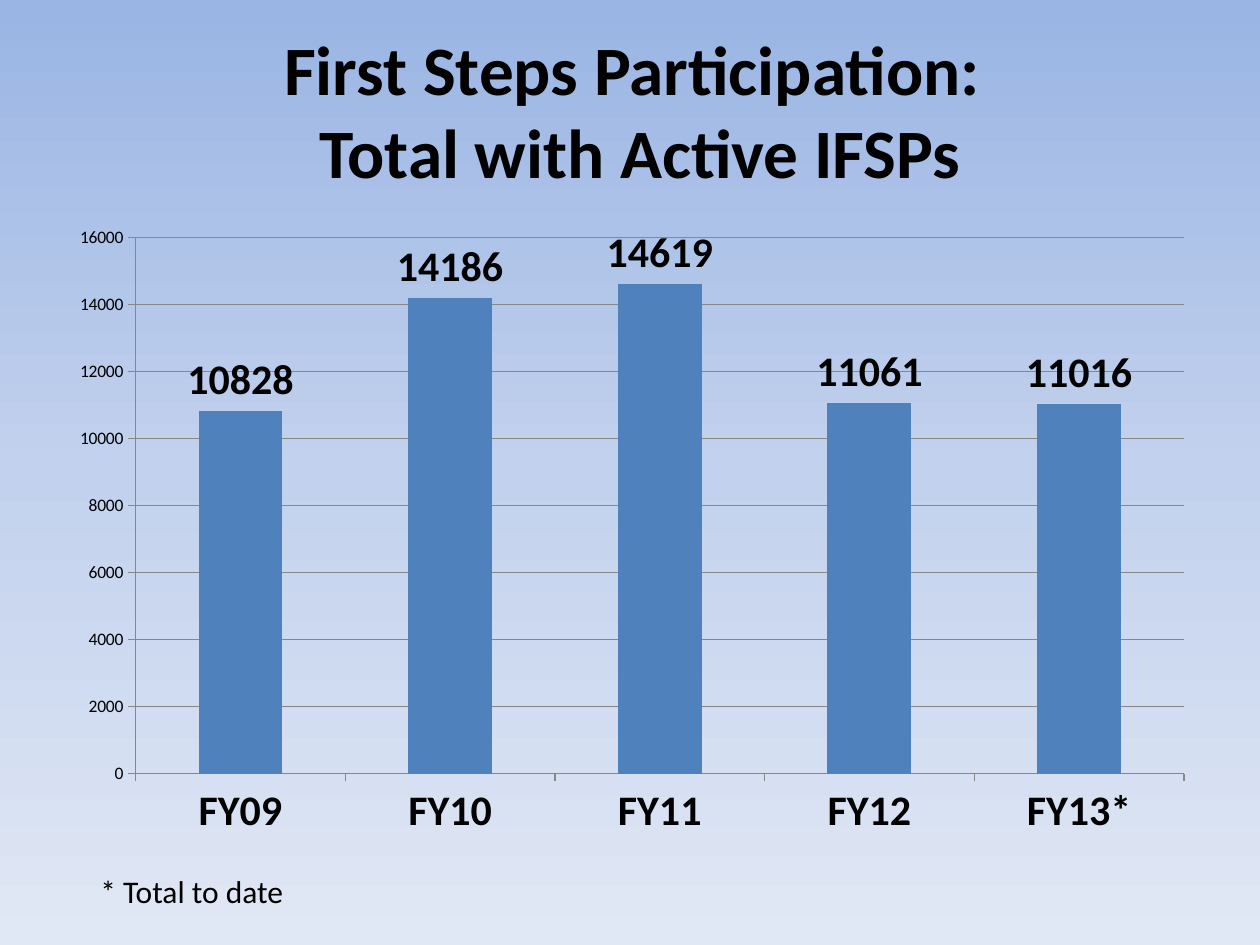
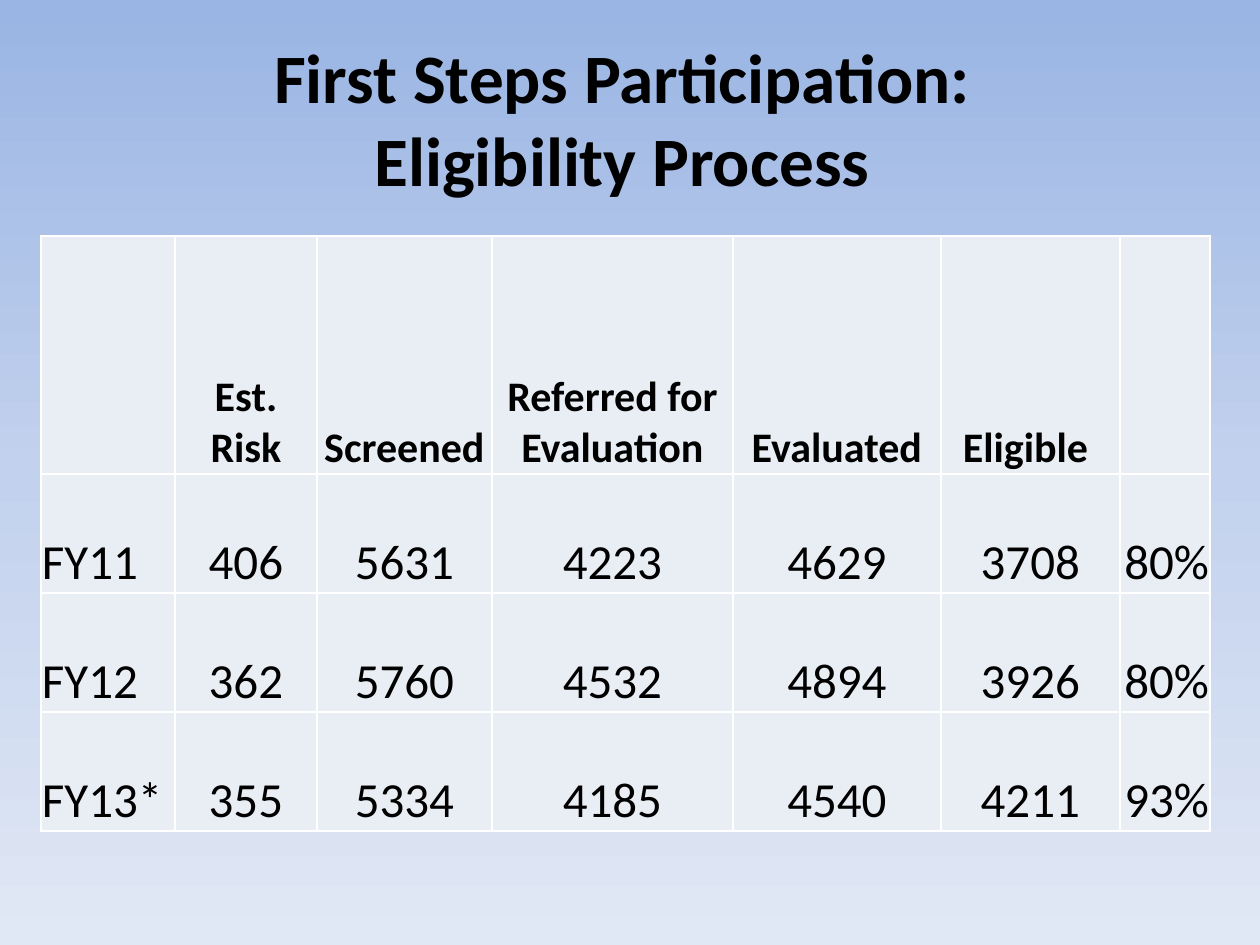
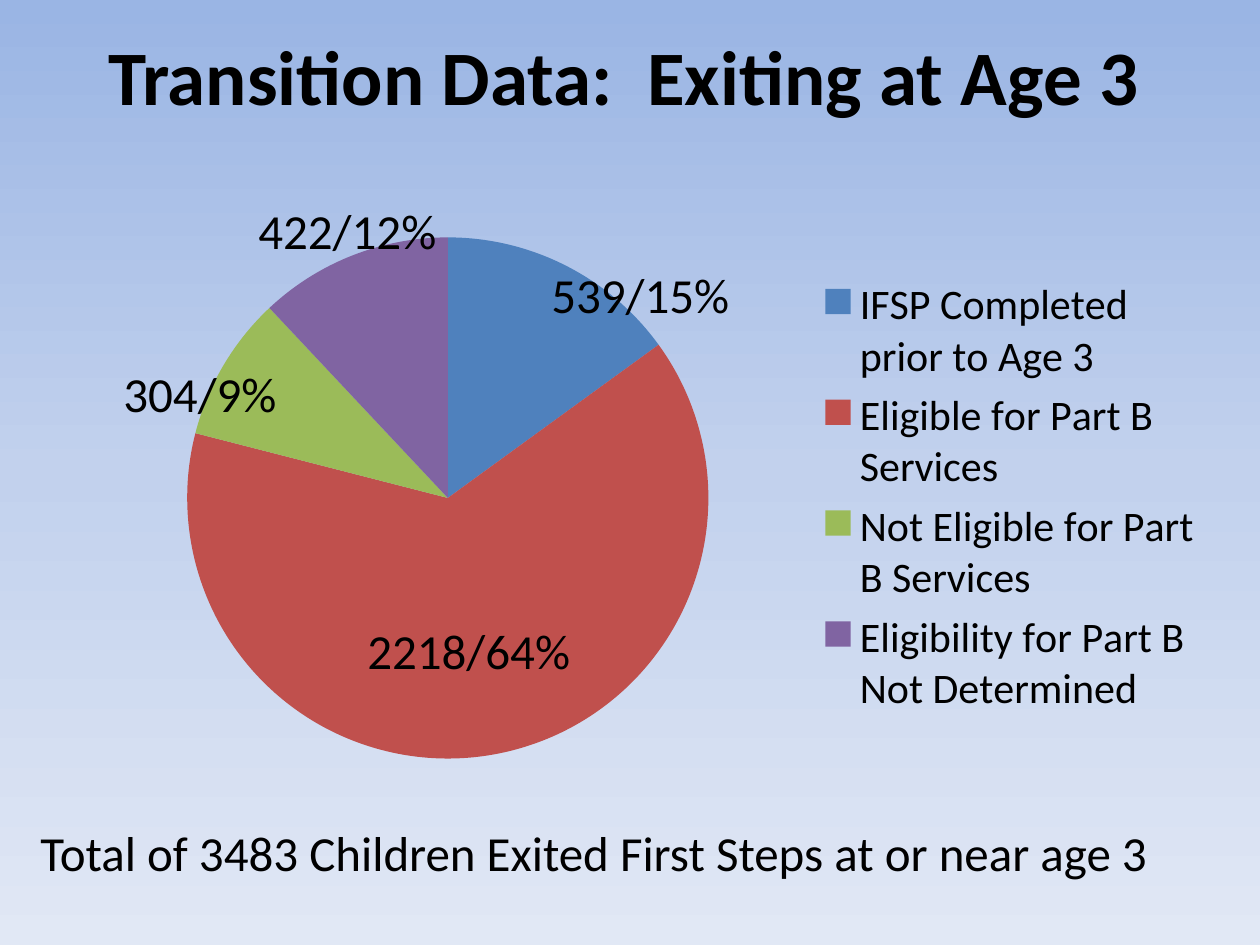
import copy
from dataclasses import dataclass

import pptx
import pptx.chart.data
import pptx.dml.color
import pptx.enum.chart
import pptx.enum.text
import pptx.oxml
import pptx.oxml.ns
import pptx.util

PX = 914400 // 126
ALIGN = pptx.enum.text.PP_ALIGN
ANCHOR = pptx.enum.text.MSO_ANCHOR
CHART = pptx.enum.chart.XL_CHART_TYPE


@dataclass(frozen=True)
class Theme:
    font: str = "Calibri"
    ink: str = "000000"
    axis: str = "878787"
    cell: str = "E9EDF4"
    border: str = "FFFFFF"
    sky: tuple = ((0, "9AB5E4"), (0.5, "C2D1ED"), (1, "E1E8F5"))
    slices: tuple = ("4F81BD", "C0504D", "9BBB59", "8064A2")
    title: float = 39.6
    big_title: float = 44
    body: float = 28
    strong: float = 24
    note: float = 18
    small: float = 10


THEME = Theme()


def rgb(value):
    return pptx.dml.color.RGBColor.from_string(value)


def emu(box):
    return [length * PX for length in box]


def style(font, size, bold=False):
    font.name = THEME.font
    font.size = pptx.util.Pt(size)
    font.bold = bold
    font.color.rgb = rgb(THEME.ink)


def add_run(paragraph, words, size, bold=False):
    run = paragraph.add_run()
    run.text = words
    style(run.font, size, bold)


def paint_background(master):
    """Vertical three-stop gradient shared by every slide."""
    fill = master.background.fill
    fill.gradient()
    fill.gradient_angle = 270
    stops = master._element.find(".//" + pptx.oxml.ns.qn("a:gsLst"))
    stops.append(copy.deepcopy(stops[-1]))
    for stop, (position, color) in zip(fill.gradient_stops, THEME.sky):
        stop.position = position
        stop.color.rgb = rgb(color)


def titled_slide(prs, box, lines, size):
    slide = prs.slides.add_slide(prs.slide_layouts[5])
    title = slide.shapes.title
    title.left, title.top, title.width, title.height = emu(box)
    frame = title.text_frame
    frame.auto_size = pptx.enum.text.MSO_AUTO_SIZE.NONE
    frame.vertical_anchor = ANCHOR.MIDDLE
    paragraph = frame.paragraphs[0]
    paragraph.alignment = ALIGN.CENTER
    for index, line in enumerate(lines):
        if index:
            paragraph.add_line_break()
        add_run(paragraph, line, size, bold=True)
    return slide


def add_note(slide, box, words, size):
    frame = slide.shapes.add_textbox(*emu(box)).text_frame
    frame.word_wrap = True
    frame.auto_size = pptx.enum.text.MSO_AUTO_SIZE.SHAPE_TO_FIT_TEXT
    add_run(frame.paragraphs[0], words, size)


def add_chart(slide, box, kind, categories, values):
    data = pptx.chart.data.CategoryChartData(number_format="0")
    data.categories = categories
    data.add_series("Series 1", values)
    chart = slide.shapes.add_chart(kind, *emu(box), data).chart
    chart.has_title = False
    chart.has_legend = False
    style(chart.font, THEME.small)
    return chart


def gray_line(line):
    line.color.rgb = rgb(THEME.axis)
    line.width = pptx.util.Pt(0.75)


def participation_chart(slide, box):
    chart = add_chart(slide, box, CHART.COLUMN_CLUSTERED,
                      ["FY09", "FY10", "FY11", "FY12", "FY13*"],
                      [10828, 14186, 14619, 11061, 11016])
    # Bars and their values
    plot = chart.plots[0]
    plot.gap_width = 150
    plot.vary_by_categories = False
    bars = plot.series[0]
    bars.invert_if_negative = False
    bars.format.fill.solid()
    bars.format.fill.fore_color.rgb = rgb(THEME.slices[0])
    labels = bars.data_labels
    labels.show_value = True
    labels.position = pptx.enum.chart.XL_LABEL_POSITION.OUTSIDE_END
    labels.number_format = "0"
    labels.number_format_is_linked = False
    style(labels.font, THEME.strong, bold=True)
    # Axes
    years, totals = chart.category_axis, chart.value_axis
    for axis in (years, totals):
        axis.major_tick_mark = pptx.enum.chart.XL_TICK_MARK.OUTSIDE
        gray_line(axis.format.line)
    style(years.tick_labels.font, THEME.strong, bold=True)
    style(totals.tick_labels.font, THEME.small)
    totals.tick_labels.number_format = "0"
    totals.tick_labels.number_format_is_linked = False
    totals.has_major_gridlines = True
    gray_line(totals.major_gridlines.format.line)


def exit_chart(slide, box):
    chart = add_chart(slide, box, CHART.PIE,
                      ["IFSP Completed prior to Age 3",
                       "Eligible for Part B Services",
                       "Not Eligible for Part B Services",
                       "Eligibility for Part B Not Determined"],
                      [15, 64, 9, 12])
    chart.plots[0].vary_by_categories = True
    outcomes = chart.plots[0].series[0]
    for index, color in enumerate(THEME.slices):
        fill = outcomes.points[index].format.fill
        fill.solid()
        fill.fore_color.rgb = rgb(color)
    chart.has_legend = True
    chart.legend.position = pptx.enum.chart.XL_LEGEND_POSITION.RIGHT
    chart.legend.include_in_layout = False
    style(chart.legend.font, THEME.strong)


def outline_cell(cell):
    properties = cell._tc.get_or_add_tcPr()
    for index, side in enumerate(("lnL", "lnR", "lnT", "lnB")):
        properties.insert(index, pptx.oxml.parse_xml(
            f'<a:{side} {pptx.oxml.ns.nsdecls("a")} w="12700"><a:solidFill>'
            f'<a:srgbClr val="{THEME.border}"/></a:solidFill></a:{side}>'))


def eligibility_table(slide, box):
    rows = [
        ["", "Est. Risk", "Screened", "Referred for Evaluation", "Evaluated", "Eligible ", ""],
        ["FY11", "406", "5631", "4223", "4629", "3708", "80%"],
        ["FY12", "362", "5760", "4532", "4894", "3926", "80%"],
        ["FY13*", "355", "5334", "4185", "4540", "4211", "93%"],
    ]
    widths = [134, 142, 175, 241, 208, 179, 90]
    heights = [238, 119, 119, 119]
    alignments = [ALIGN.LEFT] + [ALIGN.CENTER] * 5 + [ALIGN.RIGHT]

    table = slide.shapes.add_table(len(rows), len(widths), *emu(box)).table
    table.first_row = table.horz_banding = False
    for column, width in zip(table.columns, widths):
        column.width = width * PX
    for row, height in zip(table.rows, heights):
        row.height = height * PX
    for r, row in enumerate(rows):
        size = THEME.body if r else THEME.strong
        for c, words in enumerate(row):
            cell = table.cell(r, c)
            cell.fill.solid()
            cell.fill.fore_color.rgb = rgb(THEME.cell)
            outline_cell(cell)
            cell.vertical_anchor = ANCHOR.BOTTOM
            cell.margin_left = cell.margin_right = cell.margin_top = PX
            cell.margin_bottom = 0
            if words:
                paragraph = cell.text_frame.paragraphs[0]
                paragraph.alignment = alignments[c]
                add_run(paragraph, words, size, bold=r == 0)


def participation_slide(prs):
    slide = titled_slide(prs, (73, 60, 1134, 98),
                         ["First Steps Participation: ", "Total with Active IFSPs"], THEME.title)
    participation_chart(slide, (57, 215, 1150, 635))
    add_note(slide, (88, 866, 226, 50), "* Total to date", THEME.note)


def eligibility_slide(prs):
    slide = titled_slide(prs, (63, 38, 1134, 158),
                         ["First Steps Participation: ", "Eligibility Process "], THEME.title)
    eligibility_table(slide, (41, 236, 1169, 595))


def transition_slide(prs):
    slide = titled_slide(prs, (57, -4, 1134, 158),
                         ["Transition Data:  Exiting at Age 3"], THEME.big_title)
    exit_chart(slide, (84, 220, 1134, 556))
    add_note(slide, (28, 816, 1191, 72),
             "Total of 3483 Children Exited First Steps at or near age 3", THEME.body)
    # Count and share beside each slice
    for left, top, width, share in [(355, 614, 241, "2218/64%"), (539, 258, 237, "539/15%"),
                                    (111, 357, 220, "304/9%"), (246, 194, 220, "422/12%")]:
        add_note(slide, (left, top, width, 72), share, THEME.body)


def main():
    prs = pptx.Presentation()
    prs.slide_width, prs.slide_height = pptx.util.Inches(10), pptx.util.Inches(7.5)
    paint_background(prs.slide_master)
    participation_slide(prs)
    eligibility_slide(prs)
    transition_slide(prs)
    prs.save("out.pptx")


if __name__ == "__main__":
    main()
